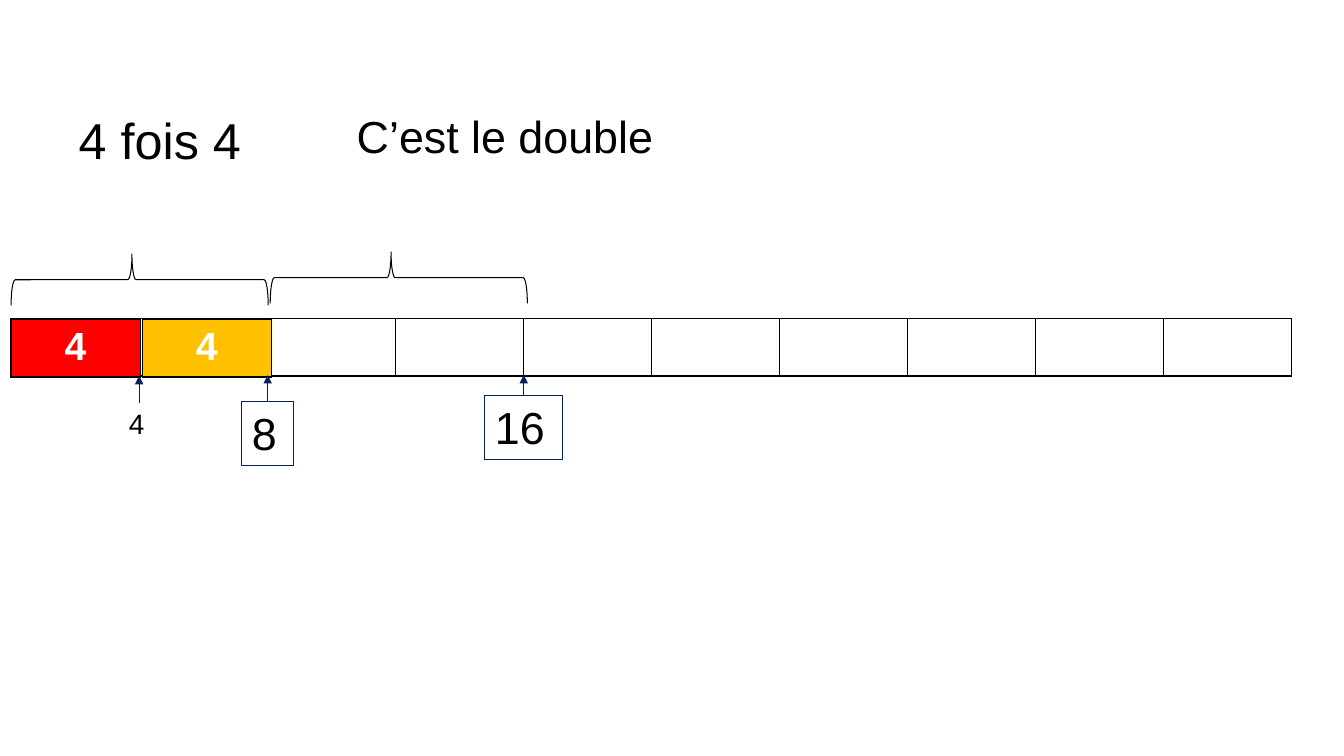
import dataclasses

import lxml.etree
import pptx
import pptx.dml.color
import pptx.enum.shapes
import pptx.enum.text
import pptx.oxml.ns
import pptx.util

Inches = pptx.util.Inches
Pt = pptx.util.Pt
Align = pptx.enum.text.PP_ALIGN


@dataclasses.dataclass(frozen=True)
class Theme:
    font: str = "Arial"
    ink: str = "000000"
    light: str = "FFFFFF"
    navy: str = "002060"
    red: str = "FF0000"
    amber: str = "FFC000"
    title_size: int = 36
    large_size: int = 32
    cell_size: int = 28
    small_size: int = 20
    thin: float = 0.75
    border: float = 1


THEME = Theme()


def rgb(value):
    return pptx.dml.color.RGBColor.from_string(value)


def set_text(frame, text, size, color=THEME.ink, bold=False, align=Align.LEFT):
    frame.text = text
    para = frame.paragraphs[0]
    para.alignment = align
    for span in para.runs:
        span.font.name = THEME.font
        span.font.size = Pt(size)
        span.font.bold = bold
        span.font.color.rgb = rgb(color)


def fit_frame(frame):
    frame.word_wrap = True
    frame.vertical_anchor = pptx.enum.text.MSO_ANCHOR.TOP
    frame.auto_size = pptx.enum.text.MSO_AUTO_SIZE.SHAPE_TO_FIT_TEXT


def set_title(page, text, left, top, width, height):
    title = page.shapes.title
    title.left, title.top = Inches(left), Inches(top)
    title.width, title.height = Inches(width), Inches(height)
    set_text(title.text_frame, text, THEME.title_size)
    fit_frame(title.text_frame)


def add_label(page, text, size, left, top, width, height):
    box = page.shapes.add_textbox(
        Inches(left), Inches(top), Inches(width), Inches(height))
    set_text(box.text_frame, text, size)
    fit_frame(box.text_frame)
    return box


def border_cell(cell):
    properties = cell._tc.get_or_add_tcPr()
    for index, side in enumerate(("a:lnL", "a:lnR", "a:lnT", "a:lnB")):
        line = lxml.etree.Element(
            pptx.oxml.ns.qn(side), w=str(Pt(THEME.border)))
        fill = lxml.etree.SubElement(line, pptx.oxml.ns.qn("a:solidFill"))
        lxml.etree.SubElement(
            fill, pptx.oxml.ns.qn("a:srgbClr"), val=THEME.ink)
        properties.insert(index, line)


def add_strip(page, left, top, cell_width, count=1, text="", color=None):
    height = Inches(0.57)
    table = page.shapes.add_table(
        1, count, Inches(left), Inches(top),
        Inches(cell_width * count), height).table
    table.first_row = table.horz_banding = False
    for cell in table.iter_cells():
        if color:
            cell.fill.solid()
            cell.fill.fore_color.rgb = rgb(color)
        else:
            cell.fill.background()
        border_cell(cell)
        if text:
            set_text(cell.text_frame, text, THEME.cell_size, THEME.light,
                     bold=True, align=Align.CENTER)


def add_arrow(page, x, bottom, top, box=None):
    arrow = page.shapes.add_connector(
        pptx.enum.shapes.MSO_CONNECTOR.STRAIGHT,
        Inches(x), Inches(bottom), Inches(x), Inches(top))
    if box is not None:
        arrow.begin_connect(box, 0)
        arrow.end_x = arrow.begin_x
    arrow.line.color.rgb = rgb(THEME.navy)
    arrow.line.width = Pt(THEME.thin)
    lxml.etree.SubElement(arrow.line._get_or_add_ln(),
                          pptx.oxml.ns.qn("a:tailEnd"), type="triangle")
    lxml.etree.SubElement(arrow._element.spPr,
                          pptx.oxml.ns.qn("a:effectLst"))


def add_marker(page, text, left, top, width):
    box = add_label(page, text, THEME.large_size, left, top, width, 0.64)
    box.line.color.rgb = rgb(THEME.navy)
    box.line.width = Pt(THEME.thin)
    add_arrow(page, left + width / 2, top, 3.72, box)


def add_brace(page, left, top):
    brace = page.shapes.add_shape(
        pptx.enum.shapes.MSO_SHAPE.LEFT_BRACE,
        Inches(left), Inches(top), Inches(0.51), Inches(2.55))
    brace.rotation = 90
    brace.adjustments[0] = 0.08
    brace.adjustments[1] = 0.53
    brace.shadow.inherit = False
    brace.fill.background()
    brace.line.color.rgb = rgb(THEME.ink)
    brace.line.width = Pt(THEME.thin)


def main():
    deck = pptx.Presentation()
    deck.slide_width, deck.slide_height = Inches(13.33), Inches(7.5)
    page = deck.slides.add_slide(deck.slide_layouts.get_by_name("Title Only"))

    # Headings
    set_title(page, "4 fois 4", 0.68, 1.03, 1.97, 0.71)
    add_label(page, "C’est le double", THEME.large_size, 3.44, 1.03, 3.23, 0.64)

    # Number strip with its two coloured fours
    add_strip(page, 0.11, 3.16, 1.27, count=10)
    add_strip(page, 1.41, 3.17, 1.28, text="4", color=THEME.amber)
    add_strip(page, 0.11, 3.17, 1.28, text="4", color=THEME.red)

    # Values below the strip
    add_marker(page, "16", 4.81, 3.92, 0.77)
    add_marker(page, "8", 2.4, 3.98, 0.51)
    add_label(page, "4", THEME.small_size, 1.18, 3.98, 0.51, 0.44)
    add_arrow(page, 1.38, 4, 3.73)

    # Braces above the strip
    add_brace(page, 1.13, 1.5)
    add_brace(page, 3.7, 1.48)

    deck.save("out.pptx")


if __name__ == "__main__":
    main()
